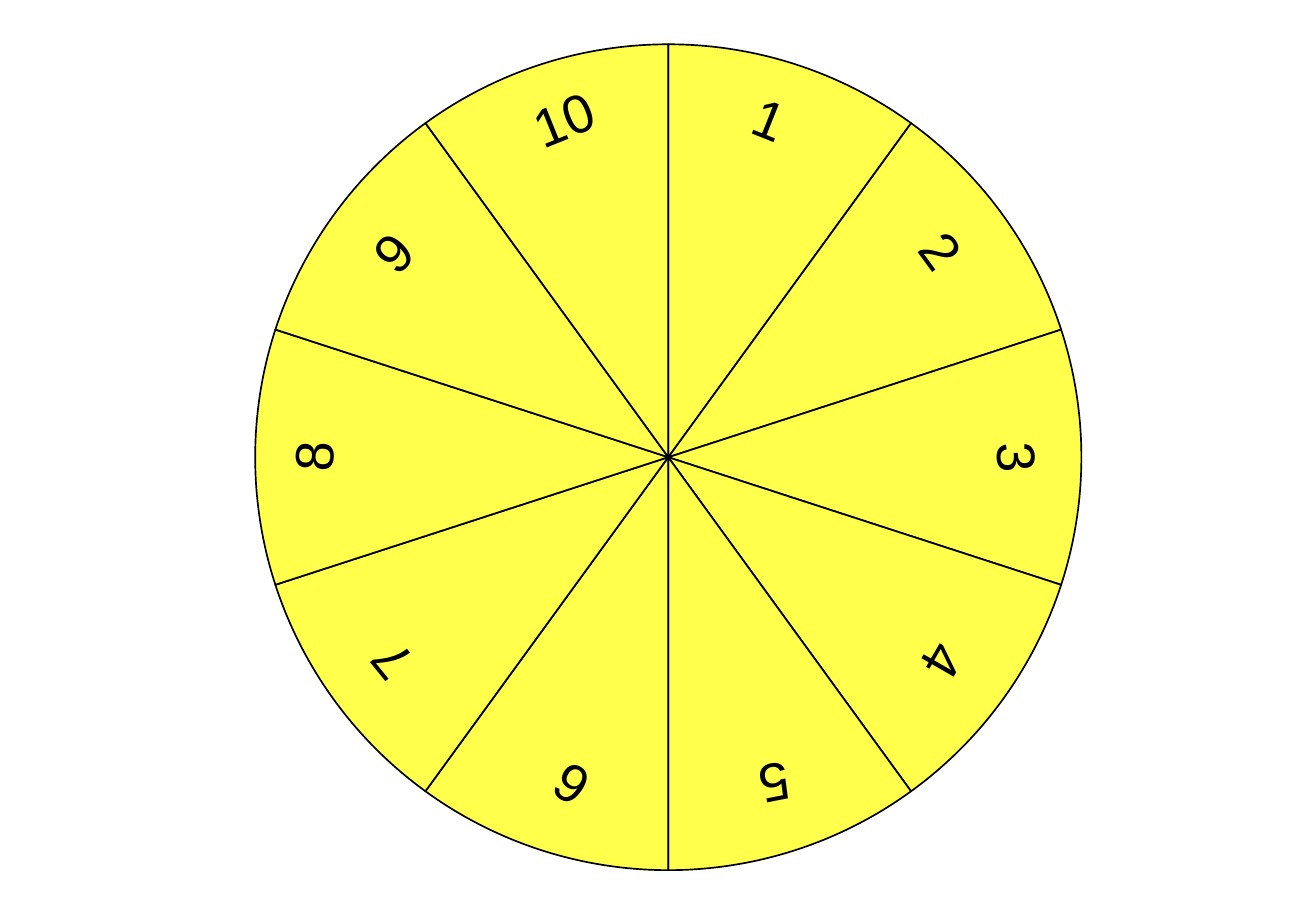
from lxml.etree import SubElement, fromstring
from pptx import Presentation
from pptx.chart.data import CategoryChartData
from pptx.dml.color import RGBColor
from pptx.enum.chart import XL_CHART_TYPE
from pptx.enum.text import MSO_ANCHOR, PP_ALIGN
from pptx.oxml.ns import nsdecls, qn
from pptx.util import Inches, Pt

HUES = {"wedge": "FFFF00", "ink": "000000"}
LABELS = [
    (5.92, 0.62, 21.8), (7.39, 1.74, 53.7), (8.03, 3.5, 86.7),
    (7.41, 5.25, 119.9), (5.94, 6.31, 169), (4.18, 6.31, 212.5),
    (2.68, 5.26, 231), (2.01, 3.5, 273), (2.7, 1.75, 313.6),
    (4.14, 0.62, 338),
]


class Wheel:
    def __init__(self, slide):
        self.slide = slide
        self.font = "Arial"
        self.size = Pt(32)

    def hue(self, name):
        return RGBColor.from_string(HUES[name])

    def pie(self, left, top, width, height, disc, count):
        data = CategoryChartData()
        data.categories = [str(n + 1) for n in range(count)]
        data.add_series("Series 1", [10] * count)
        chart = self.slide.shapes.add_chart(
            XL_CHART_TYPE.PIE, Inches(left), Inches(top),
            Inches(width), Inches(height), data).chart
        chart.has_legend = False
        chart.has_title = False
        chart.font.name = "Calibri"
        chart.font.size = Pt(10)
        chart.font.color.rgb = self.hue("ink")
        plot = chart.plots[0]
        plot.vary_by_categories = False
        for n in range(count):
            self.wedge(plot.series[0].points[n].format)
        self.place(chart, disc / width, disc / height)

    def wedge(self, style):
        style.fill.solid()
        style.fill.fore_color.rgb = self.hue("wedge")
        style.line.color.rgb = self.hue("ink")
        style.line.width = Pt(1)
        tint = style.fill._xPr.find(qn("a:solidFill"))[0]
        SubElement(tint, qn("a:alpha")).set("val", "70000")

    def place(self, chart, wide, high):
        area = chart._chartSpace.chart.plotArea
        for old in area.findall(qn("c:layout")):
            area.remove(old)
        frame = fromstring(f"<c:layout {nsdecls('c')}><c:manualLayout/></c:layout>")
        rules = [
            ("layoutTarget", "inner"), ("xMode", "edge"), ("yMode", "edge"),
            ("x", (1 - wide) / 2), ("y", (1 - high) / 2),
            ("w", wide), ("h", high),
        ]
        for tag, val in rules:
            SubElement(frame[0], qn(f"c:{tag}")).set("val", str(val))
        area.insert(0, frame)

    def label(self, text, left, top, turn):
        box = self.slide.shapes.add_textbox(
            Inches(left), Inches(top), Inches(0.91), Inches(0.51))
        box.rotation = turn
        frame = box.text_frame
        frame.word_wrap = True
        frame.vertical_anchor = MSO_ANCHOR.TOP
        frame.margin_top = Inches(0.09)
        frame.margin_bottom = 0
        para = frame.paragraphs[0]
        para.alignment = PP_ALIGN.CENTER
        run = para.add_run()
        run.text = text
        run.font.name = self.font
        run.font.size = self.size
        run.font.color.rgb = self.hue("ink")


def main():
    deck = Presentation()
    deck.slide_width = Inches(10.83)
    deck.slide_height = Inches(7.5)
    wheel = Wheel(deck.slides.add_slide(deck.slide_layouts[6]))
    wheel.pie(0.33, 0.23, 10.34, 7.07, 6.8, len(LABELS))
    for n, (left, top, turn) in enumerate(LABELS, 1):
        wheel.label(str(n), left, top, turn)
    deck.save("out.pptx")


if __name__ == "__main__":
    main()
